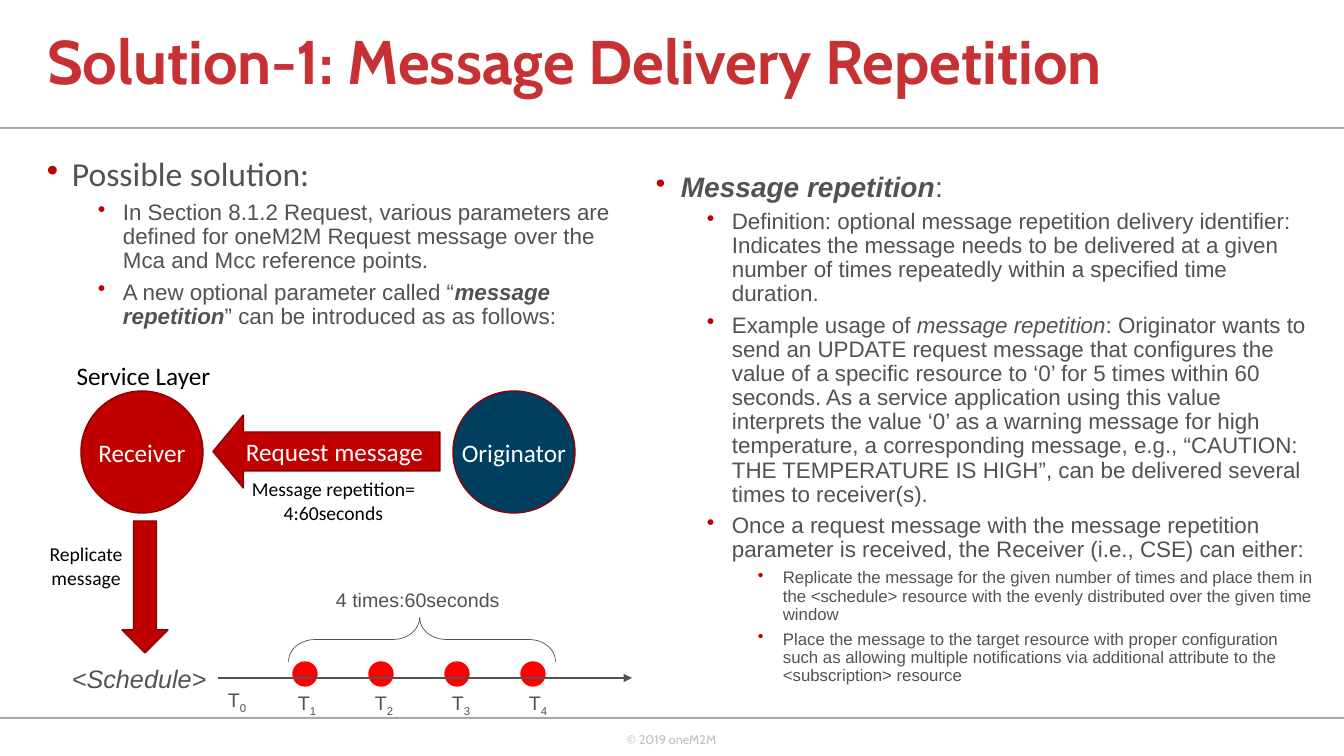
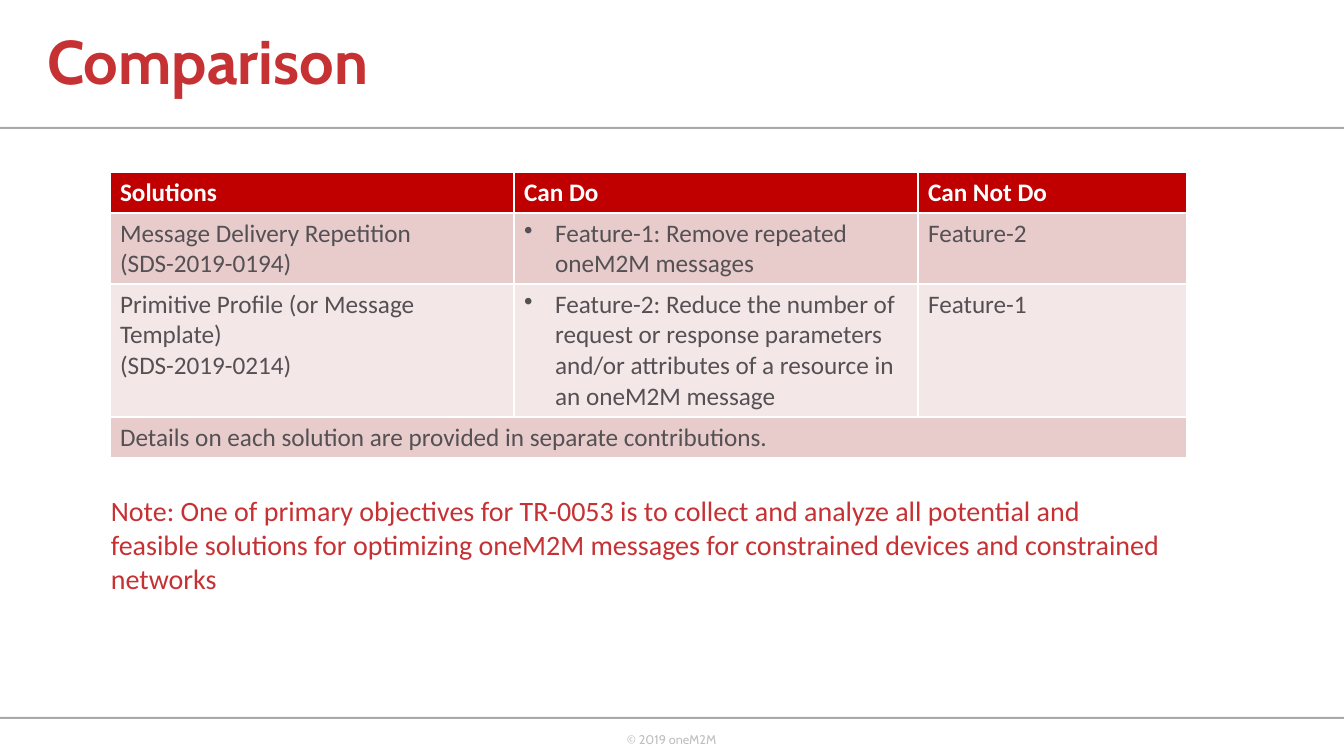
from pptx import Presentation, util as u
from pptx.dml.color import RGBColor
from pptx.enum import shapes, text
from pptx.oxml.ns import qn
from lxml import etree

PX = 914400 / 100.8
RED, DARK_RED, TITLE_RED, DOT_RED = "C00000", "8E0000", "C63133", "FF0000"
NAVY, GREY, RULE_GREY, FOOTER_GREY = "003F60", "545054", "A7A9AC", "BFBFBF"
WHITE, BLACK, ROSE, PALE_ROSE = "FFFFFF", "000000", "E8CCCC", "F4E7E7"
LEFT, CENTER = text.PP_ALIGN.LEFT, text.PP_ALIGN.CENTER
SHAPE = shapes.MSO_SHAPE
rgb = RGBColor.from_string


def write(tf, content, size, color, font="Calibri", align=LEFT, bold=False, wrap=False):
    tf.text = content
    tf.word_wrap = wrap
    for p in tf.paragraphs:
        p.alignment = align
        for r in p.runs:
            r.font.size, r.font.name, r.font.bold = u.Pt(size), font, bold
            r.font.color.rgb = rgb(color)


def bullet(p, left, hang, color):
    pPr = p._p.get_or_add_pPr()
    pPr.set("marL", str(round(left * PX)))
    pPr.set("indent", str(round(-hang * PX)))
    buClr = etree.SubElement(pPr, qn("a:buClr"))
    etree.SubElement(buClr, qn("a:srgbClr"), val=color)
    etree.SubElement(pPr, qn("a:buChar"), char="•")


prs = Presentation()
prs.slide_width, prs.slide_height = round(1344 * PX), round(756 * PX)

# Titles on both slides
for title in ["Solution-1: Message Delivery Repetition", "Comparison"]:
    s = prs.slides.add_slide(prs.slide_layouts[5])
    sp = s.shapes.title
    sp.left, sp.top, sp.width, sp.height = [round(v * PX) for v in (37, 0, 1124, 129)]
    tf = sp.text_frame
    write(tf, title, 44, TITLE_RED, "Cabin", bold=True, wrap=True)
    tf.auto_size = text.MSO_AUTO_SIZE.NONE
    tf.vertical_anchor = text.MSO_ANCHOR.MIDDLE
    tf.paragraphs[0].line_spacing = 0.9
solution, comparison = prs.slides

# Rules, circles, arrows and dots: slide, kind, box, fill, line, label
rules = [(s, SHAPE.RECTANGLE, (0, y, 1344, 2), RULE_GREY, None, "")
         for s in (solution, comparison) for y in (127, 717)]
diagram = [
    (solution, SHAPE.OVAL, (81, 391, 122, 122), RED, DARK_RED, "Receiver"),
    (solution, SHAPE.OVAL, (453, 391, 122, 122), NAVY, DARK_RED, "Originator"),
    (solution, SHAPE.LEFT_ARROW, (213, 415, 227, 73), RED, DARK_RED, "Request message"),
    (solution, SHAPE.DOWN_ARROW, (122, 521, 46, 132), RED, DARK_RED, ""),
]
dots = [(solution, SHAPE.OVAL, (293 + 76 * i, 662, 24, 24), DOT_RED, DOT_RED, "")
        for i in range(4)]
for s, kind, box, fill, line, label in rules + diagram + dots:
    sp = s.shapes.add_shape(kind, *[round(v * PX) for v in box])
    sp.shadow.inherit = False
    sp.fill.solid()
    sp.fill.fore_color.rgb = rgb(fill)
    if line:
        sp.line.color.rgb = rgb(line)
        sp.line.width = u.Pt(1)
    else:
        sp.line.fill.background()
    if kind == SHAPE.LEFT_ARROW:
        sp.adjustments[0], sp.adjustments[1] = 0.534, 0.416
    if label:
        write(sp.text_frame, label, 18, WHITE, align=CENTER)
        sp.text_frame.vertical_anchor = text.MSO_ANCHOR.MIDDLE

# Plain text boxes: slide, box, text, size, colour, font, alignment
footers = [(s, (617, 727, 111, 40), "© 2019 oneM2M", 9, FOOTER_GREY, "Cabin", LEFT)
           for s in (solution, comparison)]
labels = [
    (solution, (66, 355, 155, 40), "Service Layer", 18, BLACK, "Calibri", CENTER),
    (solution, (241, 472, 185, 57), "Message repetition=\n4:60seconds", 14, BLACK, "Calibri", CENTER),
    (solution, (39, 537, 94, 57), "Replicate\nmessage", 14, BLACK, "Calibri", CENTER),
    (solution, (326, 583, 184, 34), "4 times:60seconds", 14, GREY, "Arial", LEFT),
]
for s, box, content, size, color, font, align in footers + labels:
    sp = s.shapes.add_textbox(*[round(v * PX) for v in box])
    write(sp.text_frame, content, size, color, font, align)

# Time axis
schedule = solution.shapes.add_textbox(*[round(v * PX) for v in (62, 658, 156, 40)])
write(schedule.text_frame, "<Schedule>", 18, GREY, "Arial")
schedule.text_frame.paragraphs[0].runs[0].font.italic = True
axis = solution.shapes.add_connector(shapes.MSO_CONNECTOR.STRAIGHT,
                                     *[round(v * PX) for v in (218, 678, 632, 678)])
axis.begin_connect(schedule, 3)
axis.line.color.rgb = rgb(GREY)
axis.line.width = u.Pt(2)
etree.SubElement(axis.line._get_or_add_ln(), qn("a:tailEnd"), type="triangle")
etree.SubElement(axis._element.spPr, qn("a:effectLst"))

# Time labels with subscripts
for i, (x, y) in enumerate([(218, 683)] + [(288 + 77 * k, 686) for k in range(4)]):
    sp = solution.shapes.add_textbox(*[round(v * PX) for v in (x, y, 39, 34)])
    write(sp.text_frame, "T", 14, GREY, "Arial")
    r = sp.text_frame.paragraphs[0].add_run()
    r.text = str(i)
    r.font.size, r.font.name = u.Pt(14), "Arial"
    r.font.color.rgb = rgb(GREY)
    r._r.get_or_add_rPr().set("baseline", "-25000")

# Brace over the dots
brace = solution.shapes.add_shape(SHAPE.LEFT_BRACE, *[round(v * PX) for v in (400, 506, 44, 267)])
brace.rotation = 90
brace.adjustments[0], brace.adjustments[1] = 0.606, 0.509
brace.shadow.inherit = False
brace.fill.background()
brace.line.color.rgb = rgb(GREY)
brace.line.width = u.Pt(0.5)

# Bulleted columns: level, size, font, bold emphasis, text with *emphasis*
possible = [
    (0, 24, "Calibri", False, "Possible solution:"),
    (1, 16, "Arial", False, "In Section 8.1.2 Request, various parameters are defined for oneM2M "
     "Request message over the Mca and Mcc reference points."),
    (1, 16, "Arial", True, "A new optional parameter called “*message repetition*” can be "
     "introduced as as follows:"),
]
repetition = [
    (0, 20, "Arial", True, "*Message repetition*:"),
    (1, 16, "Arial", False, "Definition: optional message repetition delivery identifier: Indicates "
     "the message needs to be delivered at a given number of times repeatedly within a specified "
     "time duration."),
    (1, 16, "Arial", False, "Example usage of *message repetition*: Originator wants to send an "
     "UPDATE request message that configures the value of a specific resource to ‘0’ for 5 times "
     "within 60 seconds. As a service application using this value interprets the value ‘0’ as a "
     "warning message for high temperature, a corresponding message, e.g., “CAUTION: THE "
     "TEMPERATURE IS HIGH”, can be delivered several times to receiver(s)."),
    (1, 16, "Arial", False, "Once a request message with the message repetition parameter is "
     "received, the Receiver (i.e., CSE) can either:"),
    (2, 12, "Arial", False, "Replicate the message for the given number of times and place them in "
     "the <schedule> resource with the evenly distributed over the given time window"),
    (2, 12, "Arial", False, "Place the message to the target resource with proper configuration such "
     "as allowing multiple notifications via additional attribute to the <subscription> resource"),
]
for box, items in [((37, 153, 610, 480), possible), ((646, 168, 678, 532), repetition)]:
    tf = solution.shapes.add_textbox(*[round(v * PX) for v in box]).text_frame
    tf.word_wrap = True
    for n, (level, size, font, bold, content) in enumerate(items):
        p = tf.add_paragraph() if n else tf.paragraphs[0]
        p.level = level
        bullet(p, 25 + 51 * level, 25, RED)
        p.line_spacing = 0.9
        p.space_before = u.Pt(5 if n else 0)
        for k, part in enumerate(content.split("*")):
            if not part:
                continue
            r = p.add_run()
            r.text = part
            r.font.size, r.font.name = u.Pt(size), font
            r.font.color.rgb = rgb(GREY)
            r.font.italic = k % 2 == 1
            r.font.bold = bold and k % 2 == 1

# Comparison table
rows = [
    ["Solutions", "Can Do", "Can Not Do"],
    ["Message Delivery Repetition\n(SDS-2019-0194)",
     "Feature-1: Remove repeated oneM2M messages", "Feature-2"],
    ["Primitive Profile (or Message Template)\n(SDS-2019-0214)",
     "Feature-2: Reduce the number of request or response parameters and/or attributes of a "
     "resource in an oneM2M message", "Feature-1"],
    ["Details on each solution are provided in separate contributions.", "", ""],
]
fills = [RED, ROSE, PALE_ROSE, ROSE]
table = comparison.shapes.add_table(4, 3, *[round(v * PX) for v in (110, 172, 1077, 286)]).table
for column, width in zip(table.columns, (404, 404, 269)):
    column.width = round(width * PX)
for i, height in enumerate((41, 71, 133, 41)):
    table.rows[i].height = round(height * PX)
    for j, content in enumerate(rows[i]):
        cell = table.cell(i, j)
        cell.fill.solid()
        cell.fill.fore_color.rgb = rgb(fills[i])
        if content:
            write(cell.text_frame, content, 18, GREY if i else WHITE, bold=i == 0, wrap=True)
        if j == 1 and i in (1, 2):
            bullet(cell.text_frame.paragraphs[0], 31, 31, GREY)
table.cell(3, 0).merge(table.cell(3, 2))

# Note under the table
note = comparison.shapes.add_textbox(*[round(v * PX) for v in (101, 489, 1078, 112)])
write(note.text_frame, "Note: One of primary objectives for TR-0053 is to collect and analyze all "
      "potential and feasible solutions for optimizing oneM2M messages for constrained devices and "
      "constrained networks", 20, TITLE_RED, wrap=True)

prs.save("out.pptx")
